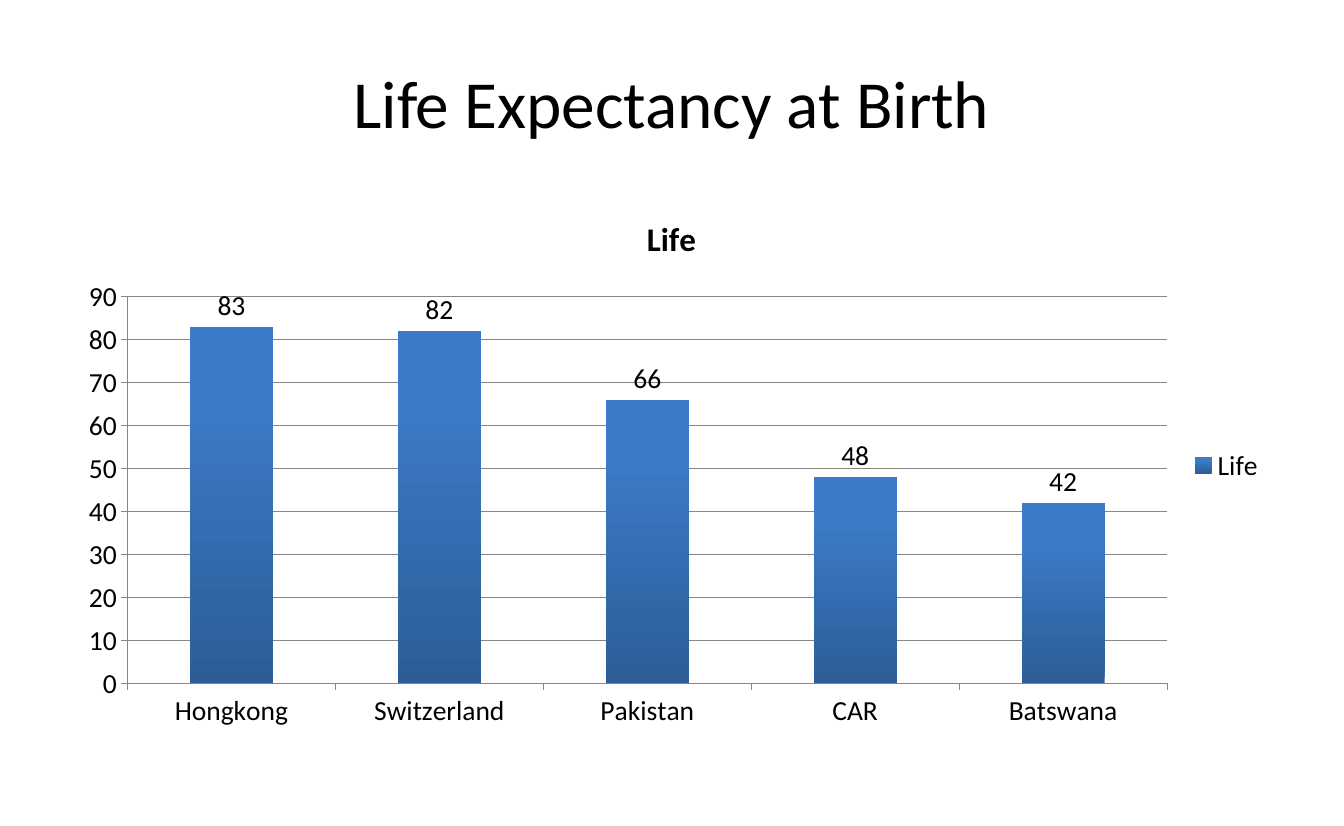
from dataclasses import dataclass

from lxml import etree
from pptx import Presentation
from pptx.chart.data import CategoryChartData
from pptx.dml.color import RGBColor as RGB
from pptx.enum.chart import XL_CHART_TYPE as ChartType
from pptx.enum.chart import XL_LABEL_POSITION as LabelPos
from pptx.enum.chart import XL_LEGEND_POSITION as LegendPos
from pptx.enum.chart import XL_TICK_MARK as TickMark
from pptx.enum.text import MSO_ANCHOR as Anchor
from pptx.enum.text import PP_ALIGN as Align
from pptx.oxml.ns import qn
from pptx.util import Cm, Pt


@dataclass(frozen=True)
class Theme:
    font: str = "Calibri"
    text: RGB = RGB(0x00, 0x00, 0x00)
    line: RGB = RGB(0x86, 0x86, 0x86)
    bar_bottom: RGB = RGB(0x2C, 0x5D, 0x98)
    bar_top: RGB = RGB(0x3C, 0x7B, 0xC7)
    title_size: float = 44
    chart_title_size: float = 21.6
    chart_size: float = 18
    line_width: float = 0.75


@dataclass(frozen=True)
class Box:
    left: float
    top: float
    width: float
    height: float

    def cm(self):
        return Cm(self.left), Cm(self.top), Cm(self.width), Cm(self.height)


@dataclass(frozen=True)
class Country:
    name: str
    life: int


THEME = Theme()
TITLE_BOX = Box(1.55, 0.76, 27.91, 3.18)
CHART_BOX = Box(1.55, 4.45, 27.89, 12.57)
PLOT_SHARE = Box(0.05, 0.19, 0.86, 0.71)
COUNTRIES = [
    Country("Hongkong", 83),
    Country("Switzerland", 82),
    Country("Pakistan", 66),
    Country("CAR", 48),
    Country("Batswana", 42),
]


def style_font(font, size: float, bold: bool = False) -> None:
    font.name = THEME.font
    font.size = Pt(size)
    font.bold = bold
    font.color.rgb = THEME.text


def style_line(line) -> None:
    line.color.rgb = THEME.line
    line.width = Pt(THEME.line_width)


def add_title(slide, box: Box, text: str) -> None:
    tf = slide.shapes.add_textbox(*box.cm()).text_frame
    tf.word_wrap = True
    tf.vertical_anchor = Anchor.MIDDLE
    p = tf.paragraphs[0]
    p.text = text
    p.alignment = Align.CENTER
    style_font(p.runs[0].font, THEME.title_size)


def fix_plot_area(chart, share: Box) -> None:
    """Place the inner plot area by its share of the chart's width and height."""
    plot_area = chart.plots[0]._element.getparent()
    for old in plot_area.findall(qn("c:layout")):
        plot_area.remove(old)
    layout = etree.Element(qn("c:layout"))
    plot_area.insert(0, layout)
    manual = etree.SubElement(layout, qn("c:manualLayout"))
    settings = {
        "layoutTarget": "inner", "xMode": "edge", "yMode": "edge",
        "x": share.left, "y": share.top, "w": share.width, "h": share.height,
    }
    for tag, value in settings.items():
        etree.SubElement(manual, qn(f"c:{tag}")).set("val", str(value))


def style_axes(chart) -> None:
    for axis in (chart.category_axis, chart.value_axis):
        axis.major_tick_mark = TickMark.OUTSIDE
        axis.minor_tick_mark = TickMark.NONE
        style_line(axis.format.line)
    value_axis = chart.value_axis
    value_axis.minimum_scale, value_axis.maximum_scale = 0, 90
    value_axis.major_unit = 10
    value_axis.has_major_gridlines = True
    style_line(value_axis.major_gridlines.format.line)


def style_bars(plot) -> None:
    plot.vary_by_categories = False
    plot.gap_width = 150
    fill = plot.series[0].format.fill
    fill.gradient()
    fill.gradient_angle = 90
    bottom, top = fill.gradient_stops
    bottom.color.rgb, bottom.position = THEME.bar_bottom, 0
    top.color.rgb, top.position = THEME.bar_top, 0.8
    plot.has_data_labels = True
    labels = plot.data_labels
    labels.show_value = True
    labels.position = LabelPos.OUTSIDE_END
    style_font(labels.font, THEME.chart_size)


def add_life_chart(slide, box: Box, countries: list[Country]) -> None:
    data = CategoryChartData()
    data.categories = [c.name for c in countries]
    data.add_series("Life", [c.life for c in countries])
    chart = slide.shapes.add_chart(ChartType.COLUMN_CLUSTERED, *box.cm(), data).chart
    style_font(chart.font, THEME.chart_size)

    chart.has_title = True
    p = chart.chart_title.text_frame.paragraphs[0]
    p.text = "Life"
    style_font(p.runs[0].font, THEME.chart_title_size, bold=True)

    chart.has_legend = True
    chart.legend.position = LegendPos.RIGHT
    chart.legend.include_in_layout = False

    style_axes(chart)
    style_bars(chart.plots[0])
    fix_plot_area(chart, PLOT_SHARE)


def main() -> None:
    prs = Presentation()
    prs.slide_width, prs.slide_height = Cm(31.01), Cm(19.05)
    slide = prs.slides.add_slide(prs.slide_layouts[6])
    add_title(slide, TITLE_BOX, "Life Expectancy at Birth")
    add_life_chart(slide, CHART_BOX, COUNTRIES)
    prs.save("out.pptx")


if __name__ == "__main__":
    main()
